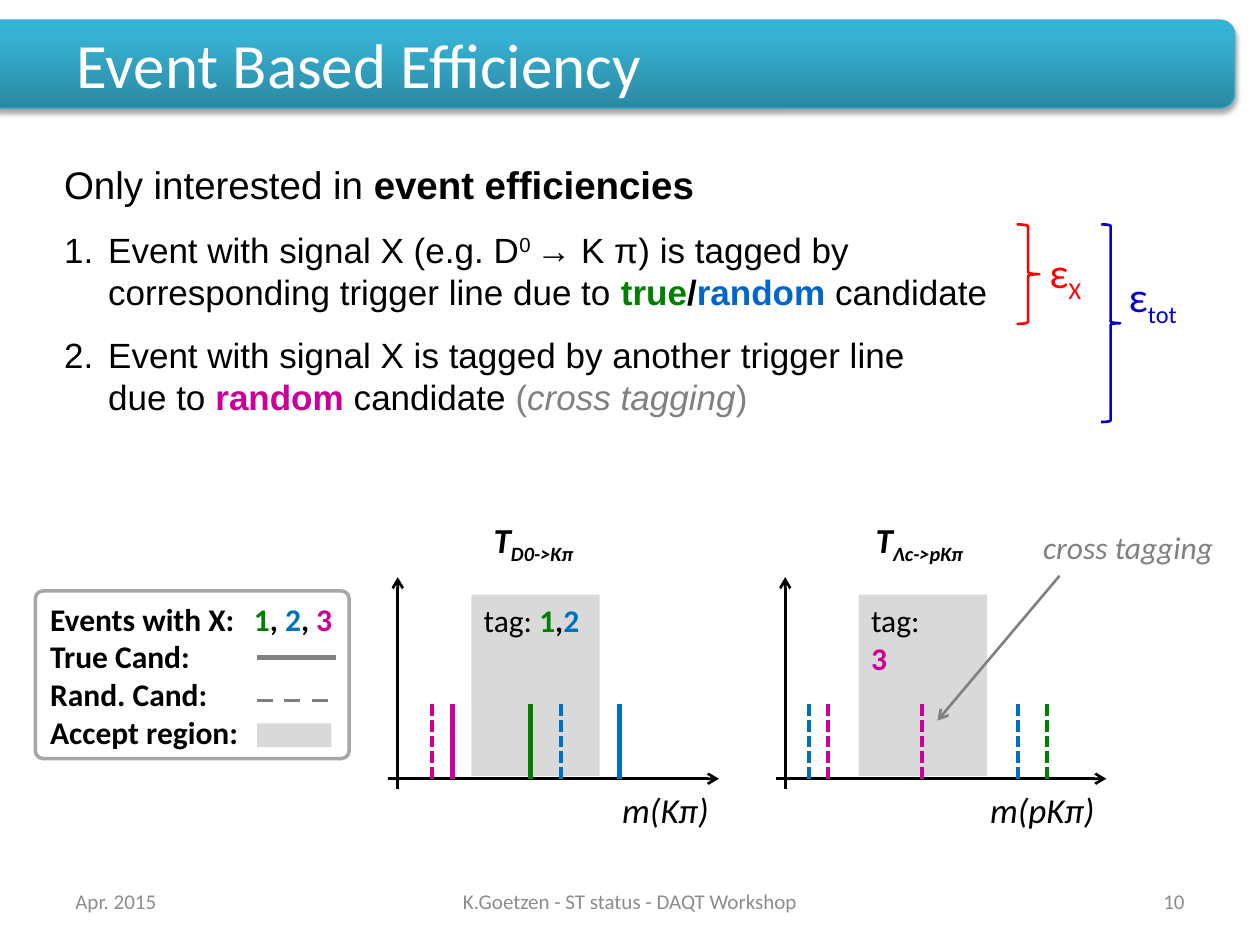
from copy import deepcopy
from dataclasses import dataclass

from lxml import etree
from pptx import Presentation
from pptx.dml.color import RGBColor
from pptx.enum.dml import MSO_LINE
from pptx.enum.shapes import MSO_CONNECTOR, MSO_SHAPE
from pptx.enum.text import MSO_ANCHOR, MSO_AUTO_SIZE, PP_ALIGN
from pptx.oxml.ns import qn
from pptx.util import Pt

SQUARE_DASH, DASH = MSO_LINE.SQUARE_DOT, MSO_LINE.DASH
RECTANGLE, ROUNDED, BRACE = MSO_SHAPE.RECTANGLE, MSO_SHAPE.ROUNDED_RECTANGLE, MSO_SHAPE.RIGHT_BRACE
LEFT, CENTER, RIGHT = PP_ALIGN.LEFT, PP_ALIGN.CENTER, PP_ALIGN.RIGHT
TOP, MIDDLE = MSO_ANCHOR.TOP, MSO_ANCHOR.MIDDLE
COLORS = {
    "black": "000000", "white": "FFFFFF", "green": "008000", "blue": "0070C0",
    "random": "0066CC", "magenta": "CC0099", "gray": "808080", "footer": "8C8C8C",
    "region": "D9D9D9", "frame": "A6A6A6", "total": "0000CC", "red": "FF0000",
    "bar_dark": "2A88A2", "bar_mid": "37B1D2", "bar_light": "34B4D6", "bar_edge": "46AAC5",
}
BASELINE, STICK_TOP = 445, 402.5


@dataclass
class Span:
    text: str
    color: str = "black"
    bold: bool = False
    italic: bool = False
    shift: int = 0  # baseline shift in percent


@dataclass
class Stick:
    x: float
    color: str
    is_true: bool = False


@dataclass
class Plot:
    left: float
    title: str
    title_left: float
    title_width: float
    mass: str
    mass_left: float
    mass_width: float
    tags: list[Span]
    sticks: list[Stick]


def rgb(name: str) -> RGBColor:
    return RGBColor.from_string(COLORS[name])


def add_line(slide, start, end, color, width, dash=None, arrow=False):
    line = slide.shapes.add_connector(MSO_CONNECTOR.STRAIGHT, *map(Pt, (*start, *end)))
    line.line.color.rgb = rgb(color)
    line.line.width = Pt(width)
    if dash is not None:
        line.line.dash_style = dash
    if arrow:
        etree.SubElement(line.line._get_or_add_ln(), qn("a:tailEnd"), type="arrow")
    etree.SubElement(line._element.spPr, qn("a:effectLst"))


def add_box(slide, kind, box, fill=None, edge=None, width=1.5):
    shape = slide.shapes.add_shape(kind, *map(Pt, box))
    shape.shadow.inherit = False
    if fill:
        shape.fill.solid()
        shape.fill.fore_color.rgb = rgb(fill)
    else:
        shape.fill.background()
    if edge:
        shape.line.color.rgb = rgb(edge)
        shape.line.width = Pt(width)
    else:
        shape.line.fill.background()
    return shape


def add_spans(paragraph, spans, size, font):
    for span in spans:
        for index, part in enumerate(span.text.split("\n")):
            if index:
                paragraph.add_line_break()
            run = paragraph.add_run()
            run.text = part
            run.font.size, run.font.name = Pt(size), font
            run.font.bold, run.font.italic = span.bold, span.italic
            run.font.color.rgb = rgb(span.color)
            if span.shift:
                run._r.get_or_add_rPr().set("baseline", str(span.shift * 1000))


def add_text(slide, box, lines, size, font="Calibri", wrap=False, align=LEFT, anchor=TOP):
    text_frame = slide.shapes.add_textbox(*map(Pt, box)).text_frame
    text_frame.word_wrap = wrap
    text_frame.auto_size = MSO_AUTO_SIZE.NONE if wrap else MSO_AUTO_SIZE.SHAPE_TO_FIT_TEXT
    text_frame.vertical_anchor = anchor
    for index, spans in enumerate(lines):
        paragraph = text_frame.add_paragraph() if index else text_frame.paragraphs[0]
        paragraph.alignment = align
        add_spans(paragraph, spans, size, font)
    return text_frame


def add_title_bar(slide):
    bar = add_box(slide, ROUNDED, (-8.6, 11.5, 714.2, 50.4), edge="bar_edge", width=0.75)
    bar.fill.gradient()
    bar.fill.gradient_angle = 90
    stop_list = bar._element.spPr.find(qn("a:gradFill")).find(qn("a:gsLst"))
    stop_list.append(deepcopy(stop_list[-1]))
    stops = ((0, "bar_dark"), (0.8, "bar_mid"), (1, "bar_light"))
    for stop, (position, color) in zip(bar.fill.gradient_stops, stops):
        stop.position = position
        stop.color.rgb = rgb(color)
    shadow = etree.SubElement(bar._element.spPr.find(qn("a:effectLst")), qn("a:outerShdw"),
                              blurRad=str(Pt(3.1)), dist=str(Pt(1.8)), dir="5400000", rotWithShape="0")
    shadow_color = etree.SubElement(shadow, qn("a:srgbClr"), val=COLORS["black"])
    etree.SubElement(shadow_color, qn("a:alpha"), val="35000")
    add_text(slide, (36.7, 16.6, 647.3, 38.9), [[Span("Event Based Efficiency", "white")]],
             36, wrap=True, anchor=MIDDLE)


def add_body(slide):
    lines = [
        [Span("Only interested in "), Span("event efficiencies", bold=True)],
        [Span("Event with signal X (e.g. D"), Span("0 ", shift=30),
         Span("→ K π) is tagged by \ncorresponding trigger line due to "),
         Span("true", "green", True), Span("/", bold=True), Span("random", "random", True),
         Span(" candidate")],
        [Span("Event with signal X is tagged by another trigger line \ndue to "),
         Span("random ", "magenta", True), Span("candidate "), Span("(", "gray"),
         Span("cross tagging", "gray", italic=True), Span(")", "gray")],
    ]
    text_frame = add_text(slide, (29.5, 88.6, 668.9, 249), lines, 20, "Arial", wrap=True)
    heading, *items = text_frame.paragraphs
    for run in heading.runs:
        run.font.size = Pt(22)
    for paragraph in text_frame.paragraphs:
        paragraph.space_before = paragraph.space_after = Pt(6)
    for paragraph in items:
        properties = paragraph._p.get_or_add_pPr()
        properties.set("marL", str(Pt(25.2)))
        properties.set("indent", str(Pt(-25.2)))
        etree.SubElement(properties, qn("a:buFont"), typeface="Arial")
        etree.SubElement(properties, qn("a:buAutoNum"), type="arabicPeriod")


def add_plot(slide, plot: Plot):
    left = plot.left
    add_line(slide, (left, BASELINE), (left + 189, BASELINE), "black", 1.5, arrow=True)
    add_line(slide, (left + 5.5, 450.7), (left + 5.5, 329.8), "black", 1.5, arrow=True)
    add_box(slide, RECTANGLE, (left + 47.5, 339.8, 73.4, 103.7), "region")
    add_text(slide, (plot.title_left, 292.5, plot.title_width, 31.7),
             [[Span("T", bold=True, italic=True), Span(plot.title, "black", True, True, -25)]], 20)
    add_text(slide, (plot.mass_left, 447.1, plot.mass_width, 31.7), [[Span(plot.mass, italic=True)]], 20)
    add_text(slide, (left + 47.5, 339.8, 46 + 8 * len(plot.tags), 28.8), [[Span("tag: "), *plot.tags]], 18)
    for stick in plot.sticks:
        add_line(slide, (stick.x, BASELINE), (stick.x, STICK_TOP), stick.color,
                 3 if stick.is_true else 2.25, None if stick.is_true else SQUARE_DASH)


def add_legend(slide):
    lines = [
        [Span("Events with X:\t", bold=True), Span("1", "green", True), Span(", ", bold=True),
         Span("2", "blue", True), Span(", ", bold=True), Span("3", "magenta", True)],
        *([Span(label, bold=True)] for label in ("True Cand:", "Rand. Cand:", "Accept region:")),
    ]
    text_frame = add_text(slide, (21.6, 339.1, 187.2, 94.3), lines, 18, wrap=True)
    tabs = etree.SubElement(text_frame.paragraphs[0]._p.get_or_add_pPr(), qn("a:tabLst"))
    etree.SubElement(tabs, qn("a:tab"), pos=str(Pt(116.4)), algn="l")
    frame = add_box(slide, ROUNDED, (20.2, 337.7, 179.3, 95.8), edge="frame", width=2)
    frame.adjustments[0] = 0.046
    add_line(slide, (146.9, 375.8), (192.2, 375.8), "gray", 3)
    add_line(slide, (146.9, 400.3), (192.2, 400.3), "gray", 2.25, DASH)
    add_box(slide, RECTANGLE, (146.9, 413.3, 42.5, 13.7), "region")


PLOTS = [
    Plot(221.8, "D0->Kπ", 275, 65.5, "m(Kπ)", 348.5, 64.8,
         [Span("1", "green", True), Span(",", bold=True), Span("2", "blue", True)],
         [Stick(303.1, "green", True), Stick(320.4, "blue"), Stick(354.2, "blue", True),
          Stick(247, "magenta"), Stick(258.5, "magenta", True)]),
    Plot(443.2, "Λc->pKπ", 493.2, 71.3, "m(pKπ)", 558.7, 74.9,
         [Span("3", "magenta", True)],
         [Stick(527, "magenta"), Stick(473, "magenta"), Stick(581.8, "blue"),
          Stick(462.2, "blue"), Stick(598.3, "green")]),
]


def main():
    presentation = Presentation()
    presentation.slide_width, presentation.slide_height = Pt(720), Pt(540)
    slide = presentation.slides.add_slide(presentation.slide_layouts[6])
    add_title_bar(slide)
    add_body(slide)
    # Efficiency braces with their symbols
    for brace, label, name, color in (
        ((581, 128.2, 13, 56.9), (592.6, 137.5, 33.8, 36), "X", "red"),
        ((629.3, 128.2, 10.8, 113), (637.9, 151.2, 44.6, 36), "tot", "total"),
    ):
        add_box(slide, BRACE, brace, edge=color)
        add_text(slide, label, [[Span("ε", color), Span(name, color, shift=-25)]], 24)
    # Mass plots and legend
    for plot in PLOTS:
        add_plot(slide, plot)
    add_legend(slide)
    # Cross tagging callout
    add_text(slide, (589, 298.1, 112.3, 28.8), [[Span("cross tagging", "gray", italic=True)]], 18)
    add_line(slide, (605.5, 329), (535.7, 411.8), "gray", 1.5, arrow=True)
    # Footer
    for left, width, text, align in ((36, 168, "Apr. 2015", LEFT), (246, 228, "K.Goetzen - ST status - DAQT Workshop", CENTER),
                                     (516, 168, "10", RIGHT)):
        add_text(slide, (left, 500.5, width, 28.8), [[Span(text, "footer")]], 12,
                 wrap=True, align=align, anchor=MIDDLE)
    presentation.save("out.pptx")


if __name__ == "__main__":
    main()
